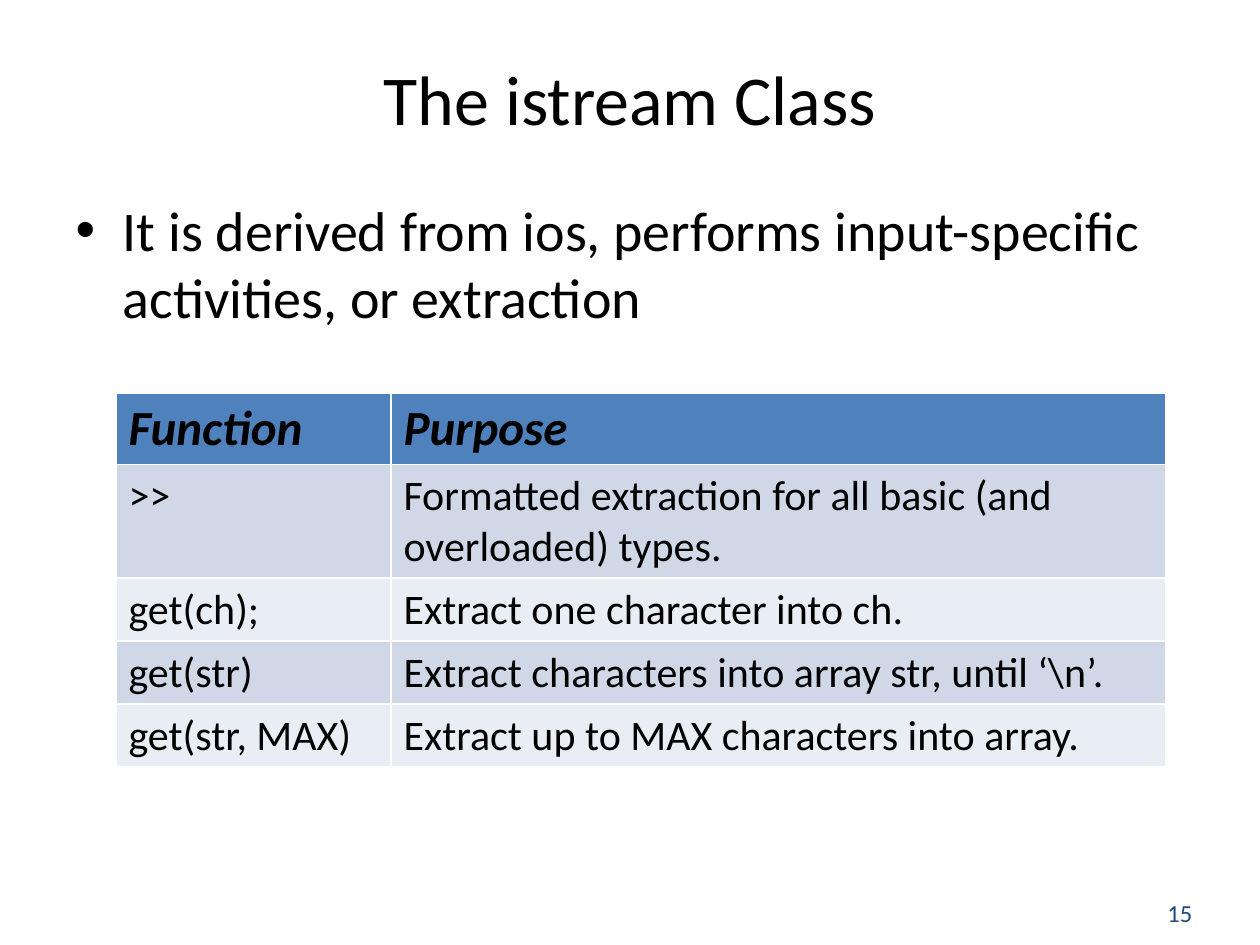
import pptx
import pptx.util
import pptx.dml.color
import pptx.enum.text

TITLE = "The istream Class"
POINT = "It is derived from ios, performs input-specific activities, or extraction"
PAGE = "15"
ROWS = [
    ("Function", "Purpose"),
    (">>", "Formatted extraction for all basic (and overloaded) types."),
    ("get(ch);", "Extract one character into ch."),
    ("get(str)", "Extract characters into array str, until ‘\\n’."),
    ("get(str, MAX)", "Extract up to MAX characters into array."),
]
COLS = (275, 775)
ROW = 52
HEAD, BANDS = "4F81BD", ("E9EDF4", "D0D8E8")
ALIGN = pptx.enum.text.PP_ALIGN
ANCHOR = pptx.enum.text.MSO_ANCHOR


def px(n):
    return round(n * 914400 / 126)


def tint(text):
    return pptx.dml.color.RGBColor.from_string(text)


def place(shape, *box):
    shape.left, shape.top, shape.width, shape.height = map(px, box)


def write(frame, text, size, color="000000", bold=False, italic=False,
          align=ALIGN.LEFT, anchor=ANCHOR.TOP):
    frame.word_wrap = True
    frame.vertical_anchor = anchor
    par = frame.paragraphs[0]
    par.alignment = align
    run = par.add_run()
    run.text = text
    font = run.font
    font.name, font.size = "Calibri", pptx.util.Pt(size)
    font.bold, font.italic = bold, italic
    font.color.rgb = tint(color)


deck = pptx.Presentation()
deck.slide_width, deck.slide_height = px(1260), px(945)
slide = deck.slides.add_slide(deck.slide_layouts[1])
title, body = slide.placeholders

place(title, 63, 48, 1134, 98)
write(title.text_frame, TITLE, 40, align=ALIGN.CENTER, anchor=ANCHOR.MIDDLE)
place(body, 63, 189, 1134, 683)
write(body.text_frame, POINT, 32)
for shape in (title, body):
    shape.text_frame.auto_size = pptx.enum.text.MSO_AUTO_SIZE.NONE

num = slide.shapes.add_textbox(px(1155), px(892), px(84), px(42))
write(num.text_frame, PAGE, 14, color="1F497D", anchor=ANCHOR.MIDDLE)

table = slide.shapes.add_table(len(ROWS), len(COLS), px(116), px(393),
                               px(sum(COLS)), px(ROW * len(ROWS))).table
for col, width in zip(table.columns, COLS):
    col.width = px(width)
for r, row in enumerate(ROWS):
    top = r == 0
    for c, text in enumerate(row):
        cell = table.cell(r, c)
        cell.fill.solid()
        cell.fill.fore_color.rgb = tint(HEAD if top else BANDS[r % 2])
        write(cell.text_frame, text, 28 if top else 24, bold=top, italic=top)

deck.save("out.pptx")
